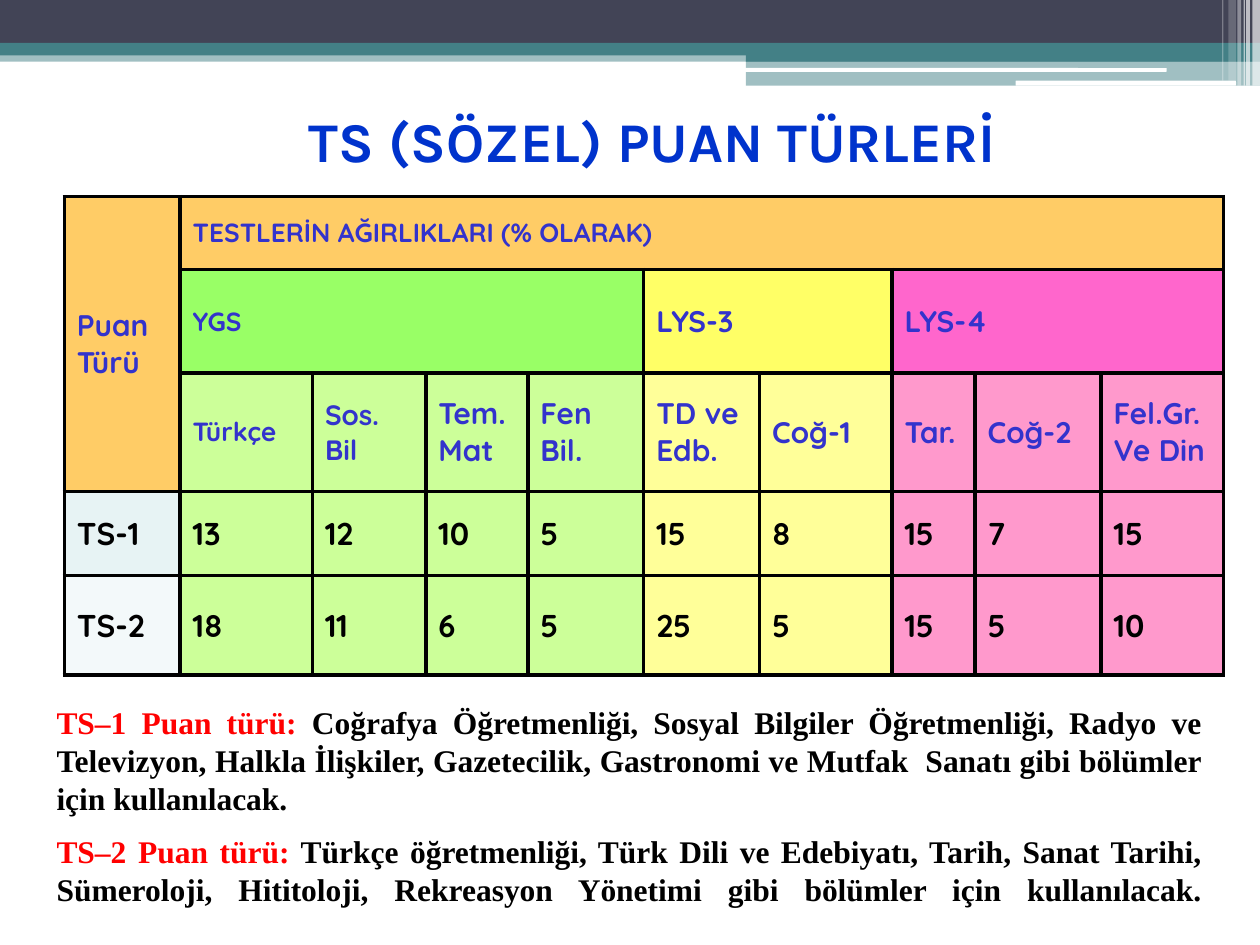
from dataclasses import dataclass

from lxml import etree
from pptx import Presentation, util as u
from pptx.dml.color import RGBColor
from pptx.enum import shapes, text
from pptx.oxml.ns import qn

WIDTH, HEIGHT = u.Inches(10), u.Inches(7.5)
COLORS = {
    "navy": "424456", "teal": "438086", "white": "FFFFFF", "black": "000000",
    "title": "0033CC", "heading": "3333CC", "red": "FF0000", "orange": "FFCC66",
    "green": "99FF66", "yellow": "FFFF66", "pink": "FF66CC",
    "light green": "CCFF99", "light yellow": "FFFF99", "light pink": "FF99CC",
    "TS-1": "E7F3F4", "TS-2": "F3F9FA",
}


@dataclass
class Bar:
    """Banner part; lengths are percentages of the slide's width."""
    left: float
    top: float
    width: float
    height: float
    color: str
    opacity: int = 100
    rounded: bool = False


@dataclass
class Cell:
    row: int
    col: int
    text: str
    fill: str
    size: int = 17
    color: str = "heading"
    rows: int = 1
    cols: int = 1


@dataclass
class Note:
    label: str
    body: str


BANNER = [
    Bar(0, 4, 100, 0.9, "teal", 50),
    Bar(0, 0, 100, 3.4, "navy"),
    Bar(0, 3.4, 100, 1, "teal"),
    Bar(59.2, 3.9, 40.8, 1, "teal"),
    Bar(59.2, 4.8, 40.8, 2, "teal", 50),
    Bar(59.1, 5.4, 33.5, 0.3, "white", rounded=True),
    Bar(80.6, 6.4, 17.5, 0.4, "white", rounded=True),
    Bar(99.4, 0, 0.6, 6.8, "white", 65),
    Bar(98.9, 0, 0.3, 6.8, "white", 65),
    Bar(98.7, 0, 0.1, 6.8, "white", 60),
    Bar(98.2, 0, 0.3, 6.8, "white", 40),
    Bar(97.5, 0, 0.6, 6.4, "white", 20),
    Bar(97, 0, 0.1, 6.4, "white", 30),
]

# Column widths and row heights, as percentages of the slide's width
COLUMNS = [9.2, 10.5, 9, 8.1, 9.2, 9.2, 10.5, 6.6, 10, 9.7]
ROWS = [5.8, 8.2, 9.4, 6.7, 7.9]

HEADINGS = [
    Cell(0, 0, "Puan Türü", "orange", rows=3),
    Cell(0, 1, "TESTLERİN AĞIRLIKLARI (% OLARAK)", "orange", 15, cols=9),
    Cell(1, 1, "YGS", "green", 15, cols=4),
    Cell(1, 5, "LYS-3", "yellow", cols=2),
    Cell(1, 7, "LYS-4", "pink", cols=3),
]
TESTS = ["Türkçe", "Sos.\nBil", "Tem.\nMat", "Fen Bil.", "TD ve Edb.", "Coğ-1",
         "Tar.", "Coğ-2", "Fel.Gr. Ve Din"]
TEST_SIZES = [15, 16] + [17] * 7
TEST_FILLS = ["light green"] * 4 + ["light yellow"] * 2 + ["light pink"] * 3
WEIGHTS = {
    "TS-1": [13, 12, 10, 5, 15, 8, 15, 7, 15],
    "TS-2": [18, 11, 6, 5, 25, 5, 15, 5, 10],
}

NOTES = [
    Note("TS–1 Puan türü:",
         " Coğrafya Öğretmenliği, Sosyal Bilgiler Öğretmenliği, Radyo ve Televizyon, "
         "Halkla İlişkiler, Gazetecilik, Gastronomi ve Mutfak  Sanatı gibi bölümler "
         "için kullanılacak."),
    Note("TS–2 Puan türü:",
         " Türkçe öğretmenliği, Türk Dili ve Edebiyatı, Tarih, Sanat Tarihi, "
         "Sümeroloji, Hititoloji, Rekreasyon Yönetimi gibi bölümler için kullanılacak."),
]


def share(percent: float) -> u.Emu:
    return u.Emu(round(WIDTH * percent / 100))


def rgb(name: str) -> RGBColor:
    return RGBColor.from_string(COLORS[name])


def style(font, name: str, size: float, color: str | None = None) -> None:
    font.name, font.size, font.bold = name, u.Pt(size), True
    if color:
        font.color.rgb = rgb(color)


def draw_bar(s, bar: Bar) -> None:
    kind = shapes.MSO_SHAPE.ROUNDED_RECTANGLE if bar.rounded else shapes.MSO_SHAPE.RECTANGLE
    sp = s.shapes.add_shape(kind, *map(share, (bar.left, bar.top, bar.width, bar.height)))
    sp.shadow.inherit = False
    sp.line.fill.background()
    sp.fill.solid()
    sp.fill.fore_color.rgb = rgb(bar.color)
    if bar.opacity < 100:
        color = sp._element.spPr.find(qn("a:solidFill"))[0]
        etree.SubElement(color, qn("a:alpha"), val=str(bar.opacity * 1000))


def draw_title(s) -> None:
    title = s.shapes.title
    title.left, title.top, title.width, title.height = map(share, (12.7, 6, 78.2, 10.3))
    title.text_frame.vertical_anchor = text.MSO_ANCHOR.MIDDLE
    p = title.text_frame.paragraphs[0]
    p.text, p.alignment = "TS (SÖZEL) PUAN TÜRLERİ", text.PP_ALIGN.CENTER
    style(p.font, "Karla", 32, "title")


def add_borders(cell) -> None:
    """Outline all four sides; call before the fill, which must follow in the XML."""
    for side in "LRTB":
        ln = etree.SubElement(cell._tc.get_or_add_tcPr(), qn(f"a:ln{side}"), w=str(u.Pt(2.25)))
        fill = etree.SubElement(ln, qn("a:solidFill"))
        etree.SubElement(fill, qn("a:srgbClr"), val=COLORS["black"])


def fill_cell(table, item: Cell) -> None:
    cell = table.cell(item.row, item.col)
    if item.rows * item.cols > 1:
        cell.merge(table.cell(item.row + item.rows - 1, item.col + item.cols - 1))
    cell.fill.solid()
    cell.fill.fore_color.rgb = rgb(item.fill)
    cell.vertical_anchor = text.MSO_ANCHOR.MIDDLE
    cell.text = item.text
    for p in cell.text_frame.paragraphs:
        style(p.font, "Quicksand", item.size, item.color)


def table_cells() -> list[Cell]:
    cells = HEADINGS + [
        Cell(2, c, test, fill, size)
        for c, (test, fill, size) in enumerate(zip(TESTS, TEST_FILLS, TEST_SIZES), 1)]
    for r, (score, weights) in enumerate(WEIGHTS.items(), 3):
        values = zip([score, *weights], [score, *TEST_FILLS])
        cells += [Cell(r, c, str(value), fill, 18, "black")
                  for c, (value, fill) in enumerate(values)]
    return cells


def draw_table(s) -> None:
    table = s.shapes.add_table(len(ROWS), len(COLUMNS), share(5.1), share(15.6),
                               share(sum(COLUMNS)), share(sum(ROWS))).table
    for column, width in zip(table.columns, COLUMNS):
        column.width = share(width)
    for row, height in zip(table.rows, ROWS):
        row.height = share(height)
    for cell in table.iter_cells():
        add_borders(cell)
    for item in table_cells():
        fill_cell(table, item)


def draw_notes(s) -> None:
    tf = s.shapes.add_textbox(*map(share, (3.5, 55.3, 92.9, 20.7))).text_frame
    tf.word_wrap = True
    for i, note in enumerate(NOTES):
        p = tf.add_paragraph() if i else tf.paragraphs[0]
        p.alignment, p.space_before = text.PP_ALIGN.JUSTIFY, u.Pt(9)
        style(p.font, "Times New Roman", 18)
        for words, color in ((note.label, "red"), (note.body, "black")):
            r = p.add_run()
            r.text, r.font.color.rgb = words, rgb(color)
    p.add_line_break()  # stretches the last line to the full width


def main() -> None:
    prs = Presentation()
    prs.slide_width, prs.slide_height = WIDTH, HEIGHT
    s = prs.slides.add_slide(prs.slide_layouts[5])
    for bar in BANNER:
        draw_bar(s, bar)
    draw_title(s)
    draw_table(s)
    draw_notes(s)
    prs.save("out.pptx")


if __name__ == "__main__":
    main()
